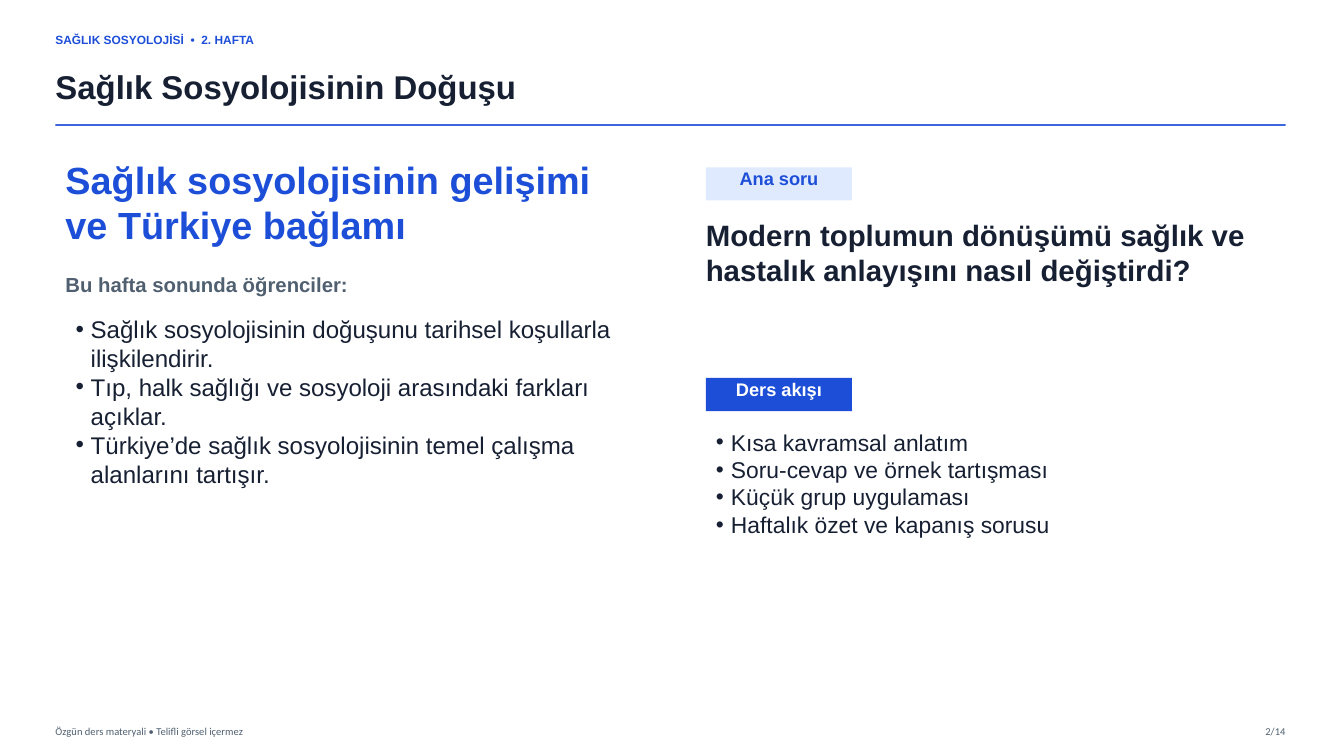
from lxml import etree
from pptx import Presentation
from pptx.dml.color import RGBColor
from pptx.enum import shapes, text
from pptx.oxml import ns
from pptx.util import Inches, Pt

COLORS = {"blue": "1D4ED8", "ink": "172033", "slate": "506070", "pale": "DFEAFE", "white": "FFFFFF"}
ALIGN = text.PP_ALIGN
ANCHOR = text.MSO_ANCHOR


class LessonPage:
    """Draws the elements of one lesson slide in a shared style."""

    def __init__(self, page):
        self.page = page

    def color(self, name):
        return RGBColor.from_string(COLORS[name])

    def place(self, box, left, top, width, height):
        box.left, box.top = Inches(left), Inches(top)
        box.width, box.height = Inches(width), Inches(height)

    def fill_text(self, box, lines, size, color, bold=False, font="Arial",
                  align=ALIGN.LEFT, anchor=ANCHOR.TOP, bullet=False):
        frame = box.text_frame
        frame.word_wrap = True
        frame.auto_size = text.MSO_AUTO_SIZE.NONE
        frame.vertical_anchor = anchor
        frame.margin_left = frame.margin_right = frame.margin_top = frame.margin_bottom = 0
        for index, line in enumerate(lines):
            para = frame.add_paragraph() if index else frame.paragraphs[0]
            para.alignment = align
            para.space_before = Pt(0)
            if bullet:
                self.bullet(para)
            span = para.add_run()
            span.text = line
            span.font.name, span.font.size, span.font.bold = font, Pt(size), bold
            span.font.color.rgb = self.color(color)

    def bullet(self, para, indent=0.15):
        properties = para._p.get_or_add_pPr()
        properties.set("marL", str(Inches(indent)))
        properties.set("indent", str(-Inches(indent)))
        etree.SubElement(properties, ns.qn("a:buFont"), typeface="Arial")
        etree.SubElement(properties, ns.qn("a:buChar"), char="•")

    def title(self, line, *area):
        box = self.page.shapes.title
        self.place(box, *area)
        self.fill_text(box, [line], 23.5, "ink", bold=True, anchor=ANCHOR.MIDDLE)

    def bullets(self, slot, lines, size, *area):
        box = self.page.placeholders[slot]
        self.place(box, *area)
        self.fill_text(box, lines, size, "ink", bullet=True)

    def label(self, line, area, size, color, **style):
        box = self.page.shapes.add_textbox(*map(Inches, area))
        self.fill_text(box, [line], size, color, **style)

    def tag(self, line, top, fill, color):
        box = self.page.shapes.add_shape(
            shapes.MSO_SHAPE.RECTANGLE, Inches(7), Inches(top), Inches(1.45), Inches(0.33))
        box.shadow.inherit = False
        box.fill.solid()
        box.fill.fore_color.rgb = self.color(fill)
        box.line.fill.background()
        self.fill_text(box, [line], 13, color, bold=True, align=ALIGN.CENTER)

    def rule(self, left, right, top):
        line = self.page.shapes.add_connector(
            shapes.MSO_CONNECTOR.STRAIGHT, Inches(left), Inches(top), Inches(right), Inches(top))
        line.line.color.rgb = self.color("blue")
        line.line.width = Pt(1.2)
        properties = line._element.spPr
        tint = properties.find(".//" + ns.qn("a:srgbClr"))
        etree.SubElement(tint, ns.qn("a:alpha"), val="85000")
        etree.SubElement(properties, ns.qn("a:effectLst"))


def main():
    deck = Presentation()
    deck.slide_width, deck.slide_height = Inches(13.33), Inches(7.5)
    lesson = LessonPage(deck.slides.add_slide(deck.slide_layouts.get_by_name("Two Content")))

    lesson.label("SAĞLIK SOSYOLOJİSİ  •  2. HAFTA", (0.55, 0.25, 3.6, 0.28), 8.5, "blue",
                 bold=True, anchor=ANCHOR.MIDDLE)
    lesson.title("Sağlık Sosyolojisinin Doğuşu", 0.55, 0.58, 11.95, 0.55)
    lesson.rule(0.55, 12.75, 1.24)

    lesson.label("Sağlık sosyolojisinin gelişimi ve Türkiye bağlamı",
                 (0.65, 1.55, 5.3, 0.95), 27, "blue", bold=True)
    lesson.label("Bu hafta sonunda öğrenciler:", (0.65, 2.7, 4.9, 0.3), 14.5, "slate", bold=True)
    lesson.bullets(1, [
        "Sağlık sosyolojisinin doğuşunu tarihsel koşullarla ilişkilendirir.",
        "Tıp, halk sağlığı ve sosyoloji arasındaki farkları açıklar.",
        "Türkiye’de sağlık sosyolojisinin temel çalışma alanlarını tartışır.",
    ], 17.2, 0.75, 3.12, 5.5, 2)

    lesson.tag("Ana soru", 1.66, "pale", "blue")
    lesson.label("Modern toplumun dönüşümü sağlık ve hastalık anlayışını nasıl değiştirdi?",
                 (7, 2.15, 5.35, 1.1), 21, "ink", bold=True)
    lesson.tag("Ders akışı", 3.75, "blue", "white")
    lesson.bullets(2, [
        "Kısa kavramsal anlatım",
        "Soru-cevap ve örnek tartışması",
        "Küçük grup uygulaması",
        "Haftalık özet ve kapanış sorusu",
    ], 16.3, 7.1, 4.25, 5.35, 1.55)

    footer = {"font": "Calibri", "anchor": ANCHOR.MIDDLE}
    lesson.label("Özgün ders materyali • Telifli görsel içermez",
                 (0.55, 7.14, 6, 0.22), 7.5, "slate", **footer)
    lesson.label("2/14", (12.1, 7.14, 0.65, 0.22), 7.5, "slate", align=ALIGN.RIGHT, **footer)
    deck.save("out.pptx")


if __name__ == "__main__":
    main()
